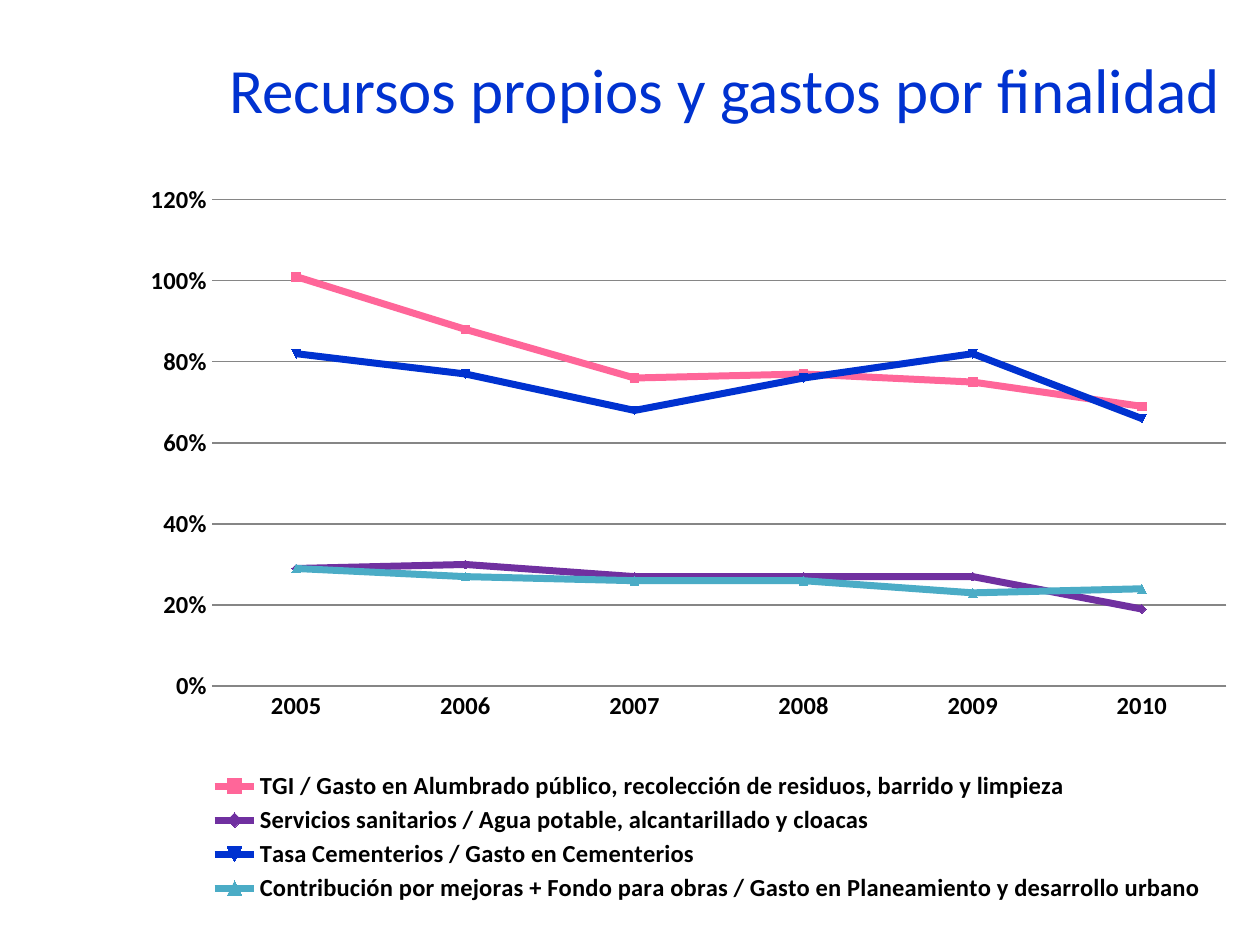
"""Build a slide with a line chart of own resources against spending by purpose."""
from dataclasses import dataclass

from lxml import etree
from pptx import Presentation
from pptx.chart.data import CategoryChartData
from pptx.dml.color import RGBColor
from pptx.enum.chart import XL_CHART_TYPE, XL_LEGEND_POSITION, XL_MARKER_STYLE, XL_TICK_MARK
from pptx.enum.text import MSO_ANCHOR, PP_ALIGN
from pptx.oxml.ns import qn
from pptx.util import Cm, Pt

LINE_CHART = XL_CHART_TYPE.LINE_MARKERS
LEGEND_BOTTOM = XL_LEGEND_POSITION.BOTTOM
AUTOMATIC_MARKER = XL_MARKER_STYLE.AUTOMATIC
NO_TICK = XL_TICK_MARK.NONE
MIDDLE = MSO_ANCHOR.MIDDLE
CENTER = PP_ALIGN.CENTER

FONT = "Calibri"
BLUE = "0032D0"
BLACK = "000000"
GRAY = "868686"
TITLE_ONLY = 5


@dataclass(frozen=True)
class Ratio:
    name: str
    values: tuple[float, ...]
    color: str


@dataclass(frozen=True)
class Area:
    x: float
    y: float
    w: float
    h: float


YEARS = [str(year) for year in range(2005, 2011)]
RATIOS = (
    Ratio("TGI / Gasto en Alumbrado público, recolección de residuos, barrido y limpieza",
          (1.01, 0.88, 0.76, 0.77, 0.75, 0.69), "FF6699"),
    Ratio("Servicios sanitarios / Agua potable, alcantarillado y cloacas",
          (0.29, 0.30, 0.27, 0.27, 0.27, 0.19), "7030A0"),
    Ratio("Tasa Cementerios / Gasto en Cementerios",
          (0.82, 0.77, 0.68, 0.76, 0.82, 0.66), BLUE),
    Ratio("Contribución por mejoras + Fondo para obras / Gasto en Planeamiento y desarrollo urbano",
          (0.29, 0.27, 0.26, 0.26, 0.23, 0.24), "4BACC6"),
)
PLOT_AREA = Area(0.06, 0.03, 0.91, 0.66)
LEGEND_AREA = Area(0.05, 0.8, 0.91, 0.19)


def rgb(color: str) -> RGBColor:
    return RGBColor.from_string(color)


def set_font(font, size: float, color: str = BLACK, bold: bool = False) -> None:
    font.name = FONT
    font.size = Pt(size)
    font.bold = bold
    font.color.rgb = rgb(color)


def set_line(line, color: str, width: float) -> None:
    line.color.rgb = rgb(color)
    line.width = Pt(width)


def set_layout(parent, position: int, area: Area, inner: bool = False) -> None:
    for old_layout in parent.findall(qn("c:layout")):
        parent.remove(old_layout)
    layout = etree.Element(qn("c:layout"))
    manual = etree.SubElement(layout, qn("c:manualLayout"))
    settings = [("layoutTarget", "inner")] if inner else []
    settings += [("xMode", "edge"), ("yMode", "edge")]
    settings += [(key, str(getattr(area, key))) for key in "xywh"]
    for tag, value in settings:
        etree.SubElement(manual, qn(f"c:{tag}")).set("val", value)
    parent.insert(position, layout)


def add_title(slide, text: str) -> None:
    title = slide.shapes.title
    title.left, title.top, title.width, title.height = Cm(4.22), Cm(0.2), Cm(20.78), Cm(3.18)
    title.text_frame.text = text
    title.text_frame.vertical_anchor = MIDDLE
    paragraph = title.text_frame.paragraphs[0]
    paragraph.alignment = CENTER
    set_font(paragraph.font, 36, BLUE)


def format_axes(chart) -> None:
    for axis in (chart.category_axis, chart.value_axis):
        axis.major_tick_mark = NO_TICK
        axis.minor_tick_mark = NO_TICK
        set_font(axis.tick_labels.font, 14, bold=True)
    set_line(chart.category_axis.format.line, GRAY, 0.75)
    value_axis = chart.value_axis
    value_axis.minimum_scale, value_axis.maximum_scale, value_axis.major_unit = 0, 1.2, 0.2
    value_axis.tick_labels.number_format = "0%"
    value_axis.tick_labels.number_format_is_linked = False
    value_axis.format.line.fill.background()
    value_axis.has_major_gridlines = True
    set_line(value_axis.major_gridlines.format.line, GRAY, 0.75)


def format_series(series, color: str) -> None:
    series.smooth = False
    set_line(series.format.line, color, 4)
    marker = series.marker
    marker.style = AUTOMATIC_MARKER
    marker.size = 5
    marker.format.fill.solid()
    marker.format.fill.fore_color.rgb = rgb(color)
    set_line(marker.format.line, color, 0.75)


def add_ratio_chart(slide, ratios: tuple[Ratio, ...]) -> None:
    data = CategoryChartData(number_format="0%")
    data.categories = YEARS
    for ratio in ratios:
        data.add_series(ratio.name, ratio.values)
    frame = slide.shapes.add_chart(LINE_CHART, Cm(2.92), Cm(3.58), Cm(22.48), Cm(14.86), data)
    chart = frame.chart
    chart.has_title = False
    set_font(chart.font, 10)
    format_axes(chart)
    plot = chart.plots[0]
    plot.vary_by_categories = False
    for series, ratio in zip(plot.series, ratios):
        format_series(series, ratio.color)
    chart.has_legend = True
    legend = chart.legend
    legend.position = LEGEND_BOTTOM
    legend.include_in_layout = False
    set_font(legend.font, 14, bold=True)
    chart_space = chart.element
    set_layout(chart_space.find(".//" + qn("c:plotArea")), 0, PLOT_AREA, inner=True)
    set_layout(chart_space.find(".//" + qn("c:legend")), 1, LEGEND_AREA)


def main() -> None:
    presentation = Presentation()
    presentation.slide_width, presentation.slide_height = Cm(25.4), Cm(19.05)
    slide = presentation.slides.add_slide(presentation.slide_layouts[TITLE_ONLY])
    add_title(slide, "Recursos propios y gastos por finalidad")
    add_ratio_chart(slide, RATIOS)
    presentation.save("out.pptx")


if __name__ == "__main__":
    main()
